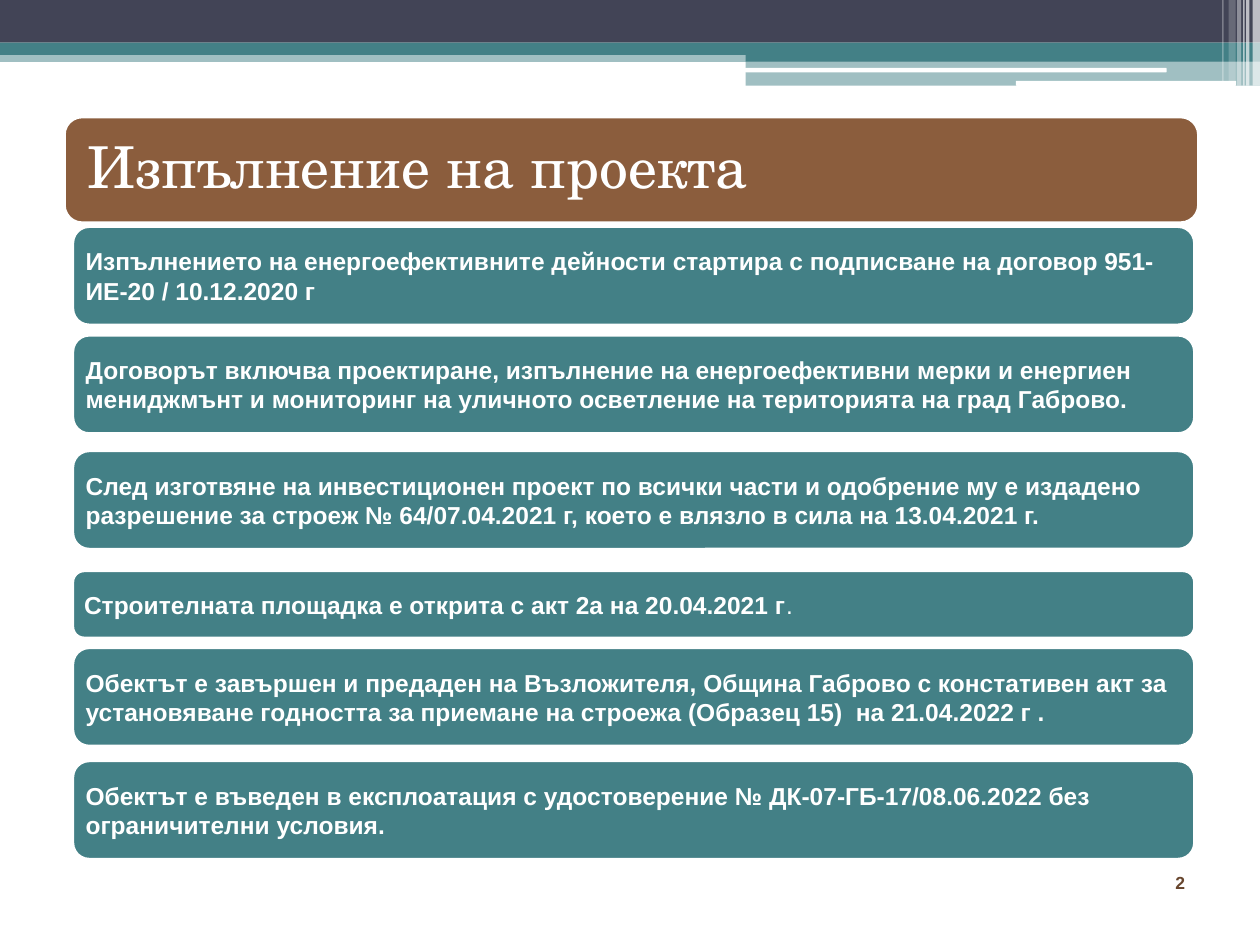
import pptx
import pptx.util
import pptx.dml.color
import pptx.enum.shapes
import pptx.enum.text
import pptx.oxml.ns
import lxml.etree

Cm, Pt = pptx.util.Cm, pptx.util.Pt
Kind = pptx.enum.shapes.MSO_SHAPE
Align = pptx.enum.text.PP_ALIGN
Anchor = pptx.enum.text.MSO_ANCHOR

THEME = {
    "white": "FFFFFF", "dark": "424456", "teal": "438086",
    "brown": "8B5D3D", "rust": "68462E",
    "head": {"name": "TeX Gyre Schola", "size": Pt(33), "bold": False},
    "text": {"name": "Arial", "size": Pt(14), "bold": True},
    "page": {"name": "Arial", "size": Pt(10), "bold": True},
}

STRIPS = [
    (0, 1.02, 25.4, 0.23, "teal", 50),
    (0, 0, 25.4, 0.86, "dark", 100),
    (0, 0.86, 25.4, 0.25, "teal", 100),
    (15.03, 0.98, 10.37, 0.26, "teal", 100),
    (15.03, 1.23, 10.37, 0.5, "teal", 50),
]
PILLS = [(15.02, 1.37, 8.5, 0.09), (20.48, 1.63, 4.44, 0.1)]
BARS = [
    (25.25, 0.15, 1.73, 65), (25.12, 0.07, 1.73, 65),
    (25.06, 0.03, 1.73, 60), (24.94, 0.08, 1.73, 40),
    (24.77, 0.14, 1.63, 20), (24.64, 0.03, 1.63, 30),
]
CARDS = [
    (0, 1.98, "Изпълнението на енергоефективните дейности стартира с подписване на договор 951-ИЕ-20 / 10.12.2020 г", ""),
    (2.19, 1.98, "Договорът включва проектиране, изпълнение на енергоефективни мерки и енергиен мениджмънт и мониторинг на уличното осветление на територията на град Габрово.", ""),
    (4.52, 1.98, "След изготвяне на инвестиционен проект по всички части и одобрение му е издадено разрешение за строеж № 64/07.04.2021 г, което е влязло в сила на 13.04.2021 г.", ""),
    (6.94, 1.35, "Строителната площадка е открита с акт 2а на 20.04.2021 г", "."),
    (8.49, 1.98, "Обектът е завършен и предаден на Възложителя, Община Габрово с констативен акт за установяване годността за приемане на строежа (Образец 15)  на 21.04.2022 г .", ""),
    (10.77, 1.98, "Обектът е въведен в експлоатация с удостоверение № ДК-07-ГБ-17/08.06.2022 без ограничителни условия.", ""),
]


def tint(key):
    """Return the theme colour with this key."""
    return pptx.dml.color.RGBColor.from_string(THEME[key])


def apply(item, form):
    """Set each attribute of item from a dict."""
    for key, value in form.items():
        setattr(item, key, value)


def block(slide, kind, box, hue, alpha=100, edge=False):
    """Add a flat shape with optional opacity and white edge."""
    shape = slide.shapes.add_shape(kind, *map(Cm, box))
    shape.shadow.inherit = False
    shape.fill.solid()
    shape.fill.fore_color.rgb = tint(hue)
    if alpha < 100:
        qn = pptx.oxml.ns.qn
        color = shape._element.spPr.find(qn("a:solidFill"))[0]
        lxml.etree.SubElement(color, qn("a:alpha"), val=str(alpha * 1000))
    if edge:
        shape.line.color.rgb = tint("white")
        shape.line.width = Pt(1.5)
    else:
        shape.line.fill.background()
    return shape


def write(shape, parts, font, hue, inset, align=Align.LEFT, anchor=Anchor.MIDDLE):
    """Write runs of (text, font changes) as one paragraph."""
    frame = shape.text_frame
    pad = Cm(inset)
    apply(frame, {
        "word_wrap": True, "auto_size": pptx.enum.text.MSO_AUTO_SIZE.NONE,
        "vertical_anchor": anchor, "margin_left": pad, "margin_right": pad,
        "margin_top": pad, "margin_bottom": pad,
    })
    line = frame.paragraphs[0]
    line.alignment = align
    for text, change in parts:
        run = line.add_run()
        run.text = text
        apply(run.font, {**THEME[font], **change})
        run.font.color.rgb = tint(hue)
    return line


def banner(slide, box):
    """Draw the layered strips across the top."""
    x, y = box[:2]
    for left, top, wide, high, hue, alpha in STRIPS:
        block(slide, Kind.RECTANGLE, (x + left, y + top, wide, high), hue, alpha)
    for left, top, wide, high in PILLS:
        block(slide, Kind.ROUNDED_RECTANGLE, (x + left, y + top, wide, high), "white")
    for left, wide, high, alpha in BARS:
        block(slide, Kind.RECTANGLE, (x + left, y, wide, high), "white", alpha)


def header(slide, box):
    """Place the title on its brown plate."""
    x, y, wide, high = box
    block(slide, Kind.ROUNDED_RECTANGLE, box, "brown", edge=True)
    title = slide.shapes.title
    apply(title, {
        "left": Cm(x + 0.1), "top": Cm(y + 0.1),
        "width": Cm(wide - 0.2), "height": Cm(high - 0.2),
    })
    line = write(title, [("Изпълнение на проекта", {})], "head", "white", 0.36)
    line.line_spacing = 0.9
    slide.shapes._spTree.append(title._element)


def cards(slide, box):
    """Stack the project steps as rounded cards."""
    x, y, wide = box[:3]
    for top, high, text, tail in CARDS:
        card = block(slide, Kind.ROUNDED_RECTANGLE, (x, y + top, wide, high), "teal", edge=True)
        parts = [(text, {})] + ([(tail, {"bold": False})] if tail else [])
        write(card, parts, "text", "white", 0.16)


def footer(slide, box):
    """Place the page number."""
    note = slide.shapes.add_textbox(*map(Cm, box))
    write(note, [("2", {})], "page", "rust", 0.13, Align.RIGHT, Anchor.BOTTOM)


def main():
    """Build and save the slide."""
    deck = pptx.Presentation()
    apply(deck, {"slide_width": Cm(25.4), "slide_height": Cm(19.05)})
    slide = deck.slides.add_slide(deck.slide_layouts[5])
    banner(slide, (0, 0, 25.4, 1.73))
    header(slide, (1.3, 2.36, 22.86, 2.13))
    cards(slide, (1.47, 4.57, 22.61, 12.75))
    footer(slide, (23.11, 17.32, 0.91, 0.81))
    deck.save("out.pptx")


if __name__ == "__main__":
    main()
